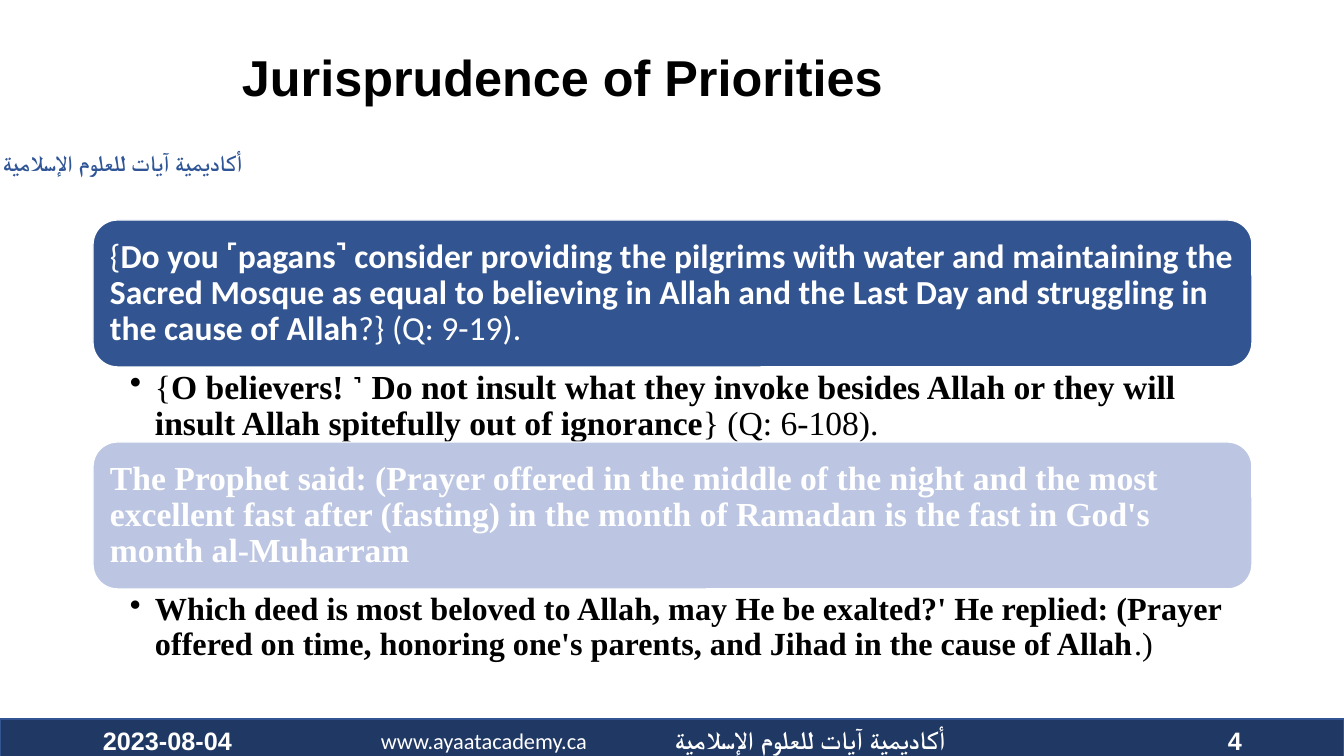
from lxml import etree
from pptx import Presentation
from pptx import util as u
from pptx.dml.color import RGBColor
from pptx.enum import shapes, text
from pptx.oxml.ns import qn

WHITE = RGBColor(0xFF, 0xFF, 0xFF)
BLACK = RGBColor(0x00, 0x00, 0x00)
NAVY = RGBColor(0x20, 0x38, 0x64)
BLUE = RGBColor(0x32, 0x54, 0x91)
LABEL_BLUE = RGBColor(0x2F, 0x55, 0x97)
PALE_BLUE = RGBColor(0xBC, 0xC6, 0xE2)

SANS, BODY, SERIF = "Arial", "Calibri", "Times New Roman"
LEFT, CENTER, RIGHT = text.PP_ALIGN.LEFT, text.PP_ALIGN.CENTER, text.PP_ALIGN.RIGHT
TOP, MIDDLE = text.MSO_ANCHOR.TOP, text.MSO_ANCHOR.MIDDLE
ACADEMY = "أكاديمية آيات للعلوم الإسلامية"
WIDTH, HEIGHT = 1344, 756
SCALE = 12192000 / WIDTH


def px(length):
    return u.Emu(round(length * SCALE))


class SlideBuilder:
    def __init__(self, deck):
        self.page = deck.slides.add_slide(deck.slide_layouts[6])

    def panel(self, kind, area, fill, line):
        shape = self.page.shapes.add_shape(kind, *map(px, area))
        shape.shadow.inherit = False
        shape.fill.solid()
        shape.fill.fore_color.rgb = fill
        shape.line.color.rgb = line
        shape.line.width = u.Pt(1)

    def label(self, area, spans, font, size, color, align=LEFT, anchor=MIDDLE,
              insets=(10, 5, 10, 5), spacing=1.0, bullet=False, rtl=False):
        """Add one paragraph; spans are (wording, bold) pairs."""
        box = self.page.shapes.add_textbox(*map(px, area))
        frame = box.text_frame
        frame.word_wrap = True
        frame.vertical_anchor = anchor
        (frame.margin_left, frame.margin_top,
         frame.margin_right, frame.margin_bottom) = map(px, insets)
        para = frame.paragraphs[0]
        para.alignment = align
        para.line_spacing = spacing
        properties = para._p.get_or_add_pPr()
        if rtl:
            properties.set("rtl", "1")
        if bullet:
            properties.set("marL", str(px(25)))
            properties.set("indent", str(-px(25)))
            etree.SubElement(properties, qn("a:buChar")).set("char", "•")
        para.font.name = font
        para.font.size = u.Pt(size)
        para.font.color.rgb = color
        if len(spans) == 1:
            para.font.bold = spans[0][1]
        for wording, bold in spans:
            span = para.add_run()
            span.text = wording
            if len(spans) > 1:
                span.font.bold = bold

    def quote(self, top, fill, font, spans):
        self.panel(shapes.MSO_SHAPE.ROUNDED_RECTANGLE, (93, top, 1159, 147), fill, WHITE)
        self.label((100, top + 7, 1145, 133), spans, font, 24, WHITE,
                   insets=(10, 10, 10, 10), spacing=0.9)

    def point(self, top, size, insets, spans):
        self.label((93, top, 1159, 75), spans, SERIF, size, BLACK, anchor=TOP,
                   insets=insets, spacing=0.9, bullet=True)


def main():
    deck = Presentation()
    deck.slide_width, deck.slide_height = px(WIDTH), px(HEIGHT)
    slide = SlideBuilder(deck)

    # Footer bar and academy name
    slide.panel(shapes.MSO_SHAPE.RECTANGLE, (0, 719, WIDTH, 40), NAVY, BLUE)
    slide.label((610, 719, 400, 40), [(ACADEMY, True)], BODY, 18, WHITE, CENTER, rtl=True)
    slide.label((364, 721, 240, 40), [("www.ayaatacademy.ca", False)], BODY, 16, WHITE, CENTER)
    slide.label((-14, 144, 273, 37), [(ACADEMY, True)], BODY, 16, LABEL_BLUE, CENTER, TOP)

    # Title
    slide.label((232, 40, 1020, 146), [("Jurisprudence of Priorities", True)], SANS, 36, BLACK,
                anchor=TOP, insets=(10, 13, 10, 5), spacing=0.9)

    # Quotations, each followed by a bullet point
    slide.quote(220, BLUE, BODY, [
        ("{", False),
        ("Do you ˹pagans˺ consider providing the pilgrims with water and maintaining the "
         "Sacred Mosque as equal to believing in Allah and the Last Day and struggling in "
         "the cause of Allah", True),
        ("?} (Q: 9-19).", False)])
    slide.point(367, 24, (37, 3, 19, 3), [
        ("{", False),
        ("O believers! ˺ Do not insult what they invoke besides Allah or they will "
         "insult Allah spitefully out of ignorance", True),
        ("} (Q: 6-108).", False)])
    slide.quote(442, PALE_BLUE, SERIF, [
        ("The Prophet said: (Prayer offered in the middle of the night and the most "
         "excellent fast after (fasting) in the month of Ramadan is the fast in God's "
         "month al-Muharram", True)])
    slide.point(589, 23, (37, 4, 23, 4), [
        ("Which deed is most beloved to Allah, may He be exalted?' He replied: (Prayer "
         "offered on time, honoring one's parents, and Jihad in the cause of Allah", True),
        (".)", False)])

    # Date and slide number
    slide.label((93, 720, 302, 40), [("2023-08-04", True)], SANS, 18, WHITE)
    slide.label((950, 720, 302, 40), [("4", True)], SANS, 18, WHITE, RIGHT)

    deck.save("out.pptx")


if __name__ == "__main__":
    main()
